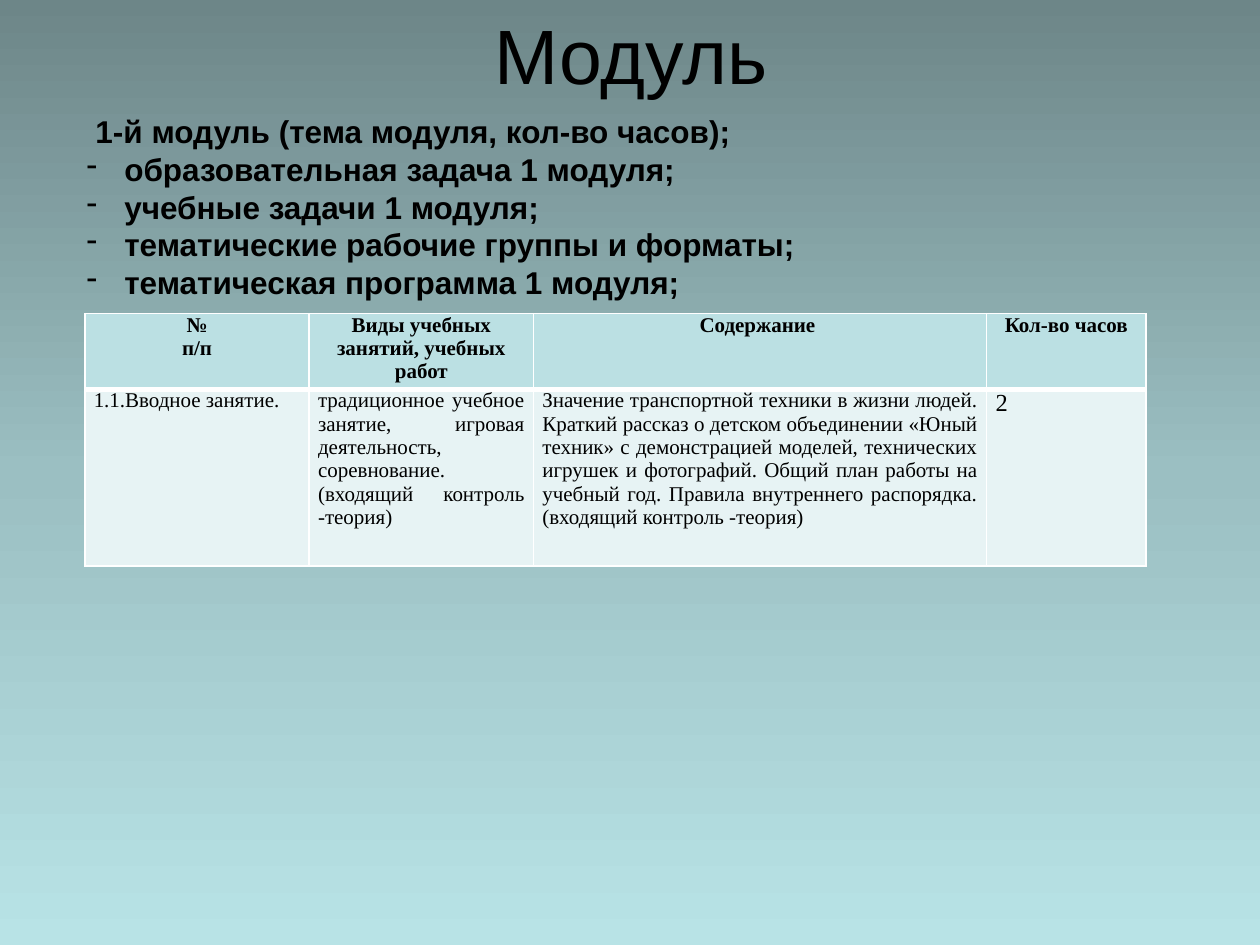
from copy import deepcopy
from dataclasses import dataclass

from lxml.etree import SubElement
from pptx import Presentation
from pptx.dml.color import RGBColor as Color
from pptx.enum.text import MSO_ANCHOR as Anchor, PP_ALIGN as Align
from pptx.oxml.ns import qn
from pptx.slide import Slide
from pptx.util import Pt

COLORS = {
    "text": "000000",
    "top": "6D8688",
    "middle": "9BBFC2",
    "bottom": "B8E3E6",
    "header": "BBE0E3",
    "body": "E7F3F4",
    "border": "FFFFFF",
}


def color(name):
    return Color.from_string(COLORS[name])


@dataclass
class ModuleSlide:
    page: Slide
    heading_font: str = "Arial"
    table_font: str = "Times New Roman"

    def background(self, names):
        fill = self.page.background.fill
        fill.gradient()
        fill.gradient_angle = 270
        stops = next(self.page.element.iter(qn("a:gsLst")))
        while len(stops) < len(names):
            stops.insert(1, deepcopy(stops[0]))
        for index, (stop, name) in enumerate(zip(fill.gradient_stops, names)):
            stop.position = index / (len(names) - 1)
            stop.color.rgb = color(name)

    def span(self, para, text, font, size, bold=False):
        span = para.add_run()
        span.text = text
        span.font.name = font
        span.font.size = Pt(size)
        span.font.bold = bold
        span.font.color.rgb = color("text")

    def box(self, left, top, width, height, anchor=Anchor.TOP):
        box = self.page.shapes.add_textbox(Pt(left), Pt(top), Pt(width), Pt(height))
        frame = box.text_frame
        frame.word_wrap = True
        frame.vertical_anchor = anchor
        return frame

    def title(self, text, *area):
        para = self.box(*area, anchor=Anchor.MIDDLE).paragraphs[0]
        para.alignment = Align.CENTER
        self.span(para, text, self.heading_font, 44)

    def bullet(self, para, mark, indent):
        props = para._p.get_or_add_pPr()
        props.set("marL", str(Pt(indent)))
        props.set("indent", str(Pt(-indent)))
        SubElement(props, qn("a:buChar"), char=mark)

    def outline(self, heading, items, *area):
        frame = self.box(*area)
        for index, text in enumerate([heading, *items]):
            para = frame.add_paragraph() if index else frame.paragraphs[0]
            para.line_spacing = Pt(21.6)
            if index:
                self.bullet(para, "-", 16.5)
            self.span(para, " " + text, self.heading_font, 18, True)

    def border(self, cell, sides):
        props = cell._tc.get_or_add_tcPr()
        for side, width in sides.items():
            line = SubElement(props, qn("a:ln" + side), w=str(Pt(width)))
            paint = SubElement(line, qn("a:solidFill"))
            SubElement(paint, qn("a:srgbClr"), val=COLORS["border"])

    def cell(self, cell, text, header, size):
        sides = {"L": 1, "R": 1, "T": 1, "B": 3} if header else {"L": 1, "R": 1, "T": 3, "B": 1}
        self.border(cell, sides)
        cell.fill.solid()
        cell.fill.fore_color.rgb = color("header" if header else "body")
        cell.margin_left = cell.margin_right = Pt(5.1)
        cell.margin_top = cell.margin_bottom = Pt(0)
        for index, line in enumerate(text.split("\n")):
            frame = cell.text_frame
            para = frame.add_paragraph() if index else frame.paragraphs[0]
            para.alignment = Align.CENTER if header else Align.JUSTIFY
            self.span(para, line, self.table_font, size, header)

    def table(self, rows, left, top, widths, heights):
        table = self.page.shapes.add_table(
            len(rows), len(widths), Pt(left), Pt(top), Pt(sum(widths)), Pt(sum(heights))
        ).table
        table.first_row = table.horz_banding = False
        for column, width in zip(table.columns, widths):
            column.width = Pt(width)
        for row, height in zip(table.rows, heights):
            row.height = Pt(height)
        for r, texts in enumerate(rows):
            for c, text in enumerate(texts):
                self.cell(table.cell(r, c), text, r == 0, 14 if text.isdigit() else 12)


def main():
    deck = Presentation()
    deck.slide_width, deck.slide_height = Pt(720), Pt(540)
    slide = ModuleSlide(deck.slides.add_slide(deck.slide_layouts[6]))
    slide.background(["top", "middle", "bottom"])
    slide.title("Модуль", 36.5, 0, 648, 61.5)
    slide.outline(
        "1-й модуль (тема модуля, кол-во часов);",
        [
            "образовательная задача 1 модуля;",
            "учебные задачи 1 модуля;",
            "тематические рабочие группы и форматы;",
            "тематическая программа 1 модуля;",
        ],
        42.5, 60.5, 607, 181.5,
    )
    slide.table(
        [
            ["№\nп/п", "Виды учебных занятий, учебных работ", "Содержание ", "Кол-во часов"],
            [
                "1.1.Вводное занятие.",
                "традиционное учебное занятие, игровая деятельность, соревнование. "
                "(входящий контроль -теория)",
                "Значение транспортной техники в жизни людей. Краткий рассказ о детском "
                "объединении «Юный техник» с демонстрацией моделей, технических игрушек "
                "и фотографий. Общий план работы на учебный год. Правила внутреннего "
                "распорядка. (входящий контроль -теория)",
                "2",
            ],
        ],
        48.5, 179.2, [128.2, 128.2, 259, 91], [43.2, 101],
    )
    deck.save("out.pptx")


if __name__ == "__main__":
    main()
